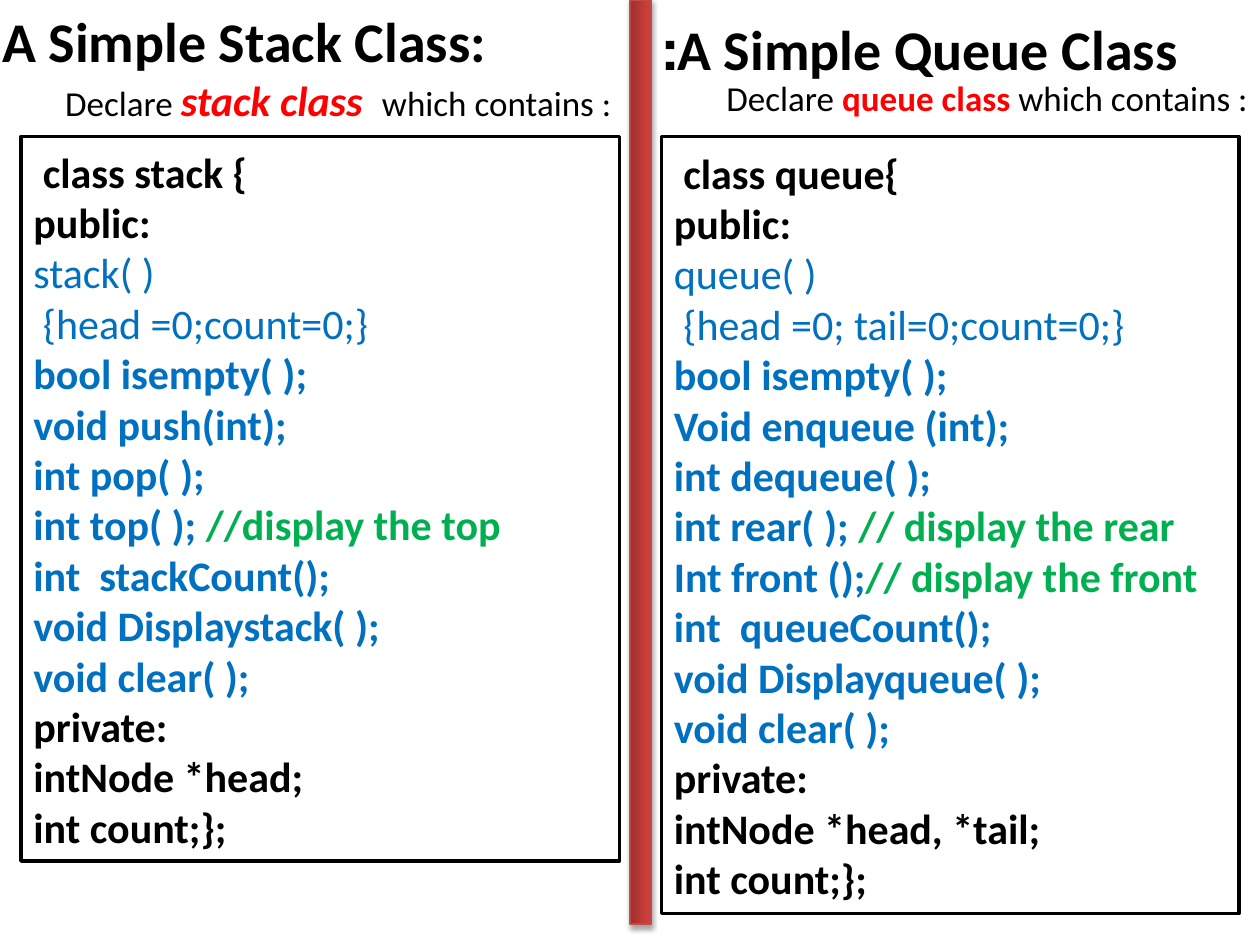
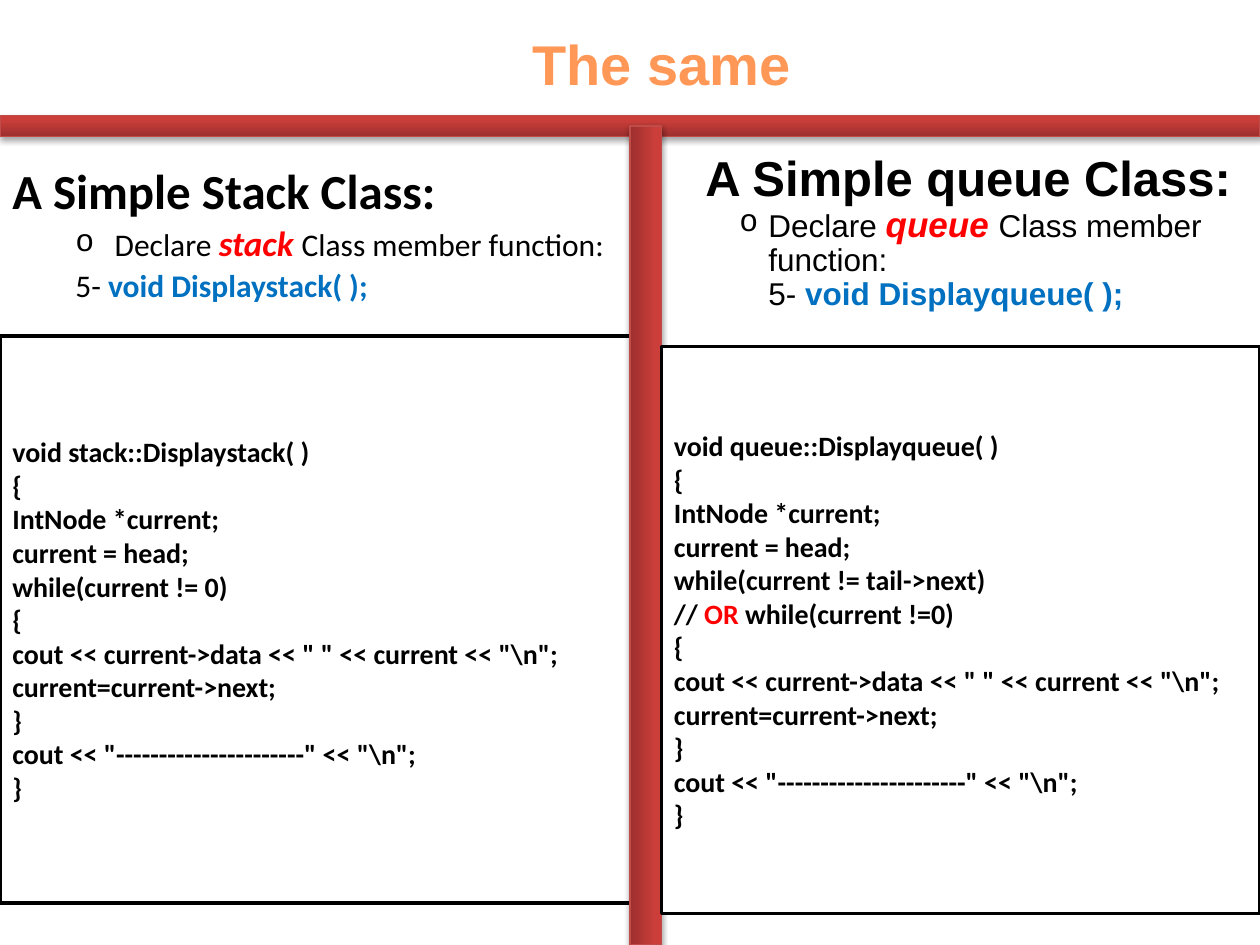
from dataclasses import dataclass

from lxml import etree
from pptx import Presentation
from pptx.dml.color import RGBColor
from pptx.enum.shapes import MSO_SHAPE
from pptx.enum.text import MSO_ANCHOR, MSO_AUTO_SIZE, PP_ALIGN
from pptx.oxml import parse_xml
from pptx.oxml.ns import qn
from pptx.util import Pt

RECT = MSO_SHAPE.RECTANGLE
TOP, MIDDLE = MSO_ANCHOR.TOP, MSO_ANCHOR.MIDDLE
LEFT, CENTER = PP_ALIGN.LEFT, PP_ALIGN.CENTER
NO_FIT = MSO_AUTO_SIZE.NONE

BLACK, WHITE = "000000", "FFFFFF"
RED, BLUE, GREEN = "FF0000", "0070C0", "00B050"
ORANGE = "FF9856"
BAR_DARK, BAR_LIGHT, BAR_EDGE = "9C2F2D", "CB3E3A", "BF4C48"
BODY_FONT, ALT_FONT = "Calibri", "Arial"
TITLE_ONLY = 5

BAR_SHADOW = (
    '<a:outerShdw xmlns:a="http://schemas.openxmlformats.org/drawingml/2006/main" '
    'blurRad="40000" dist="23000" dir="5400000" rotWithShape="0">'
    '<a:srgbClr val="000000"><a:alpha val="35000"/></a:srgbClr></a:outerShdw>'
)


@dataclass
class Run:
    text: str
    color: str = BLACK
    bold: bool = True
    italic: bool = False
    size: float = 0


@dataclass
class Indent:
    margin: float
    first: float
    before: float = 0


LEFT_INDENT = Indent(58.5, -22.5, 4)
RIGHT_INDENT = Indent(36, 0)
RIGHT_BULLET_INDENT = Indent(36, -16.5)


def rgb(value):
    return RGBColor.from_string(value)


def place(shape, box):
    shape.left, shape.top, shape.width, shape.height = (Pt(v) for v in box)


def code(*texts, color=BLACK, bold=True):
    """One single-run line per text."""
    return [[Run(t, color, bold)] for t in texts]


def add_runs(p, runs, size, font):
    for run in runs:
        r = p.add_run()
        r.text = run.text
        r.font.name = font
        r.font.size = Pt(run.size or size)
        r.font.bold = run.bold
        r.font.italic = run.italic
        r.font.color.rgb = rgb(run.color)


def add_paragraph(tf, runs, size, font):
    """Fill the first paragraph while it is empty, then append new ones."""
    p = tf.paragraphs[0] if not tf.paragraphs[0].runs else tf.add_paragraph()
    add_runs(p, runs, size, font)
    return p


def indent_paragraph(p, indent, bullet):
    p.line_spacing = 0.9
    p.space_before = Pt(indent.before)
    pPr = p._p.get_or_add_pPr()
    pPr.set("marL", str(Pt(indent.margin)))
    pPr.set("indent", str(Pt(indent.first)))
    if bullet:
        etree.SubElement(pPr, qn("a:buFont"), typeface="Courier New")
        etree.SubElement(pPr, qn("a:buChar"), char="o")


def write_heading(shape, heading, size, items, item_size, font=BODY_FONT):
    """Write a class heading and its (runs, indent, bullet) lines."""
    tf = shape.text_frame
    tf.word_wrap = True
    tf.auto_size = NO_FIT
    tf.vertical_anchor = TOP
    first = add_paragraph(tf, [Run(heading)], size, font)
    for runs, indent, bullet in items:
        p = add_paragraph(tf, runs, item_size, font)
        indent_paragraph(p, indent, bullet)
        p.alignment = LEFT
    return first


def add_text_box(s, box):
    return s.shapes.add_textbox(*(Pt(v) for v in box))


def add_code_box(s, box, lines, size):
    sp = s.shapes.add_shape(RECT, *(Pt(v) for v in box))
    sp.shadow.inherit = False
    sp.fill.solid()
    sp.fill.fore_color.rgb = rgb(WHITE)
    sp.line.color.rgb = rgb(BLACK)
    sp.line.width = Pt(2)
    tf = sp.text_frame
    tf.word_wrap = True
    tf.vertical_anchor = MIDDLE
    for runs in lines:
        add_paragraph(tf, runs, size, BODY_FONT).alignment = LEFT


def add_bar(s, box, rotation=0):
    sp = s.shapes.add_shape(RECT, *(Pt(v) for v in box))
    sp.rotation = rotation
    sp.fill.gradient()
    sp.fill.gradient_angle = 90
    stops = ((0, BAR_DARK), (0.8, BAR_LIGHT))
    for stop, (position, color) in zip(sp.fill.gradient_stops, stops):
        stop.position = position
        stop.color.rgb = rgb(color)
    sp.line.color.rgb = rgb(BAR_EDGE)
    sp.line.width = Pt(0.75)
    sp.shadow.inherit = False
    sp._element.spPr.find(qn("a:effectLst")).append(parse_xml(BAR_SHADOW))


def display_code(name, *loop):
    """Lines of the display function of the named class."""
    return [
        *code(f"void {name}::Display{name}( )", "{", "IntNode *current;",
              "current = head;"),
        *loop,
        *code("{", 'cout << current->data << " " << current << "\\n";',
              "current=current->next;", "}",
              'cout << "----------------------" << "\\n";', "}"),
    ]


def class_code(opening, constructor, body, methods, fields):
    return [
        [Run(" ", bold=False), Run(opening)],
        *code("public:"),
        *code(constructor, body, color=BLUE, bold=False),
        *methods,
        *code("private:", *fields),
    ]


def member_items(name, bullet_indent, indent):
    return [
        ([Run("Declare ", bold=False), Run(f"{name} ", RED, italic=True, size=20),
          Run("Class member function:", bold=False)], bullet_indent, True),
        ([Run("5- ", bold=False), Run(f"void Display{name}( );", BLUE)],
         indent, False),
    ]


def build_declarations(prs):
    s = prs.slides.add_slide(prs.slide_layouts[TITLE_ONLY])
    contains = Run("which contains :", bold=False)
    declare = Run("Declare ", bold=False)

    title = s.shapes.title
    place(title, (-6, 0, 648, 410))
    p = write_heading(title, "A Simple Stack Class:", 32, [
        ([declare, Run("stack class  ", RED, italic=True, size=24), contains],
         LEFT_INDENT, False)], 20)
    p.alignment = LEFT
    stack_methods = [
        *code("bool isempty( );", "void push(int);", "int pop( );", color=BLUE),
        [Run("int top( ); ", BLUE), Run("//display the top", GREEN)],
        *code("int  stackCount();", "void Displaystack( );", "void clear( );",
              color=BLUE),
    ]
    add_code_box(s, (12, 78, 342, 414), class_code(
        "class stack {", "stack( )", " {head =0;count=0;}", stack_methods,
        ("intNode *head;", "int count;};")), 24)

    add_bar(s, (102, 258, 528, 12), rotation=90)

    queue_heading = add_text_box(s, (372, 4.5, 360, 67.5))
    p = write_heading(queue_heading, "A Simple Queue Class:", 32, [
        ([declare, Run("queue class ", RED), contains], RIGHT_INDENT, False)], 20)
    p._p.get_or_add_pPr().set("rtl", "1")
    queue_methods = [
        *code("bool isempty( );", "Void enqueue (int);", "int dequeue( );",
              color=BLUE),
        [Run("int rear( ); ", BLUE), Run("// display the rear", GREEN)],
        [Run("Int front ();", BLUE), Run("// display the front", GREEN)],
        *code("int  queueCount();", "void Displayqueue( );", "void clear( );",
              color=BLUE),
    ]
    add_code_box(s, (378, 78, 330, 444), class_code(
        "class queue{", "queue( )", " {head =0; tail=0;count=0;}", queue_methods,
        ("intNode *head, *tail;", "int count;};")), 24)


def build_display_functions(prs):
    s = prs.slides.add_slide(prs.slide_layouts[TITLE_ONLY])
    title = s.shapes.title
    place(title, (292, 13.5, 172, 46))
    tf = title.text_frame
    tf.word_wrap = False
    tf.auto_size = NO_FIT
    tf.vertical_anchor = TOP
    add_paragraph(tf, [Run("The same", ORANGE)], 32, ALT_FONT).alignment = CENTER

    write_heading(add_text_box(s, (0, 88, 648, 410)), "A Simple Stack Class:", 28,
                  member_items("stack", LEFT_INDENT, LEFT_INDENT), 18)
    add_bar(s, (0, 66, 720, 12))
    add_code_box(s, (0, 192, 366, 324),
                 display_code("stack", *code("while(current != 0)")), 16)

    write_heading(add_text_box(s, (396, 81, 324, 142)), "A Simple queue Class:", 28,
                  member_items("queue", RIGHT_BULLET_INDENT, RIGHT_INDENT), 18,
                  ALT_FONT)
    add_bar(s, (135, 297, 468, 18), rotation=90)
    alternative = [Run("// "), Run("OR", RED), Run(" while(current !=0)")]
    add_code_box(s, (378, 198, 342, 324), display_code(
        "queue", *code("while(current != tail->next)"), alternative), 16)


def main():
    prs = Presentation()
    prs.slide_width, prs.slide_height = Pt(720), Pt(540)
    build_declarations(prs)
    build_display_functions(prs)
    prs.save("out.pptx")


if __name__ == "__main__":
    main()
